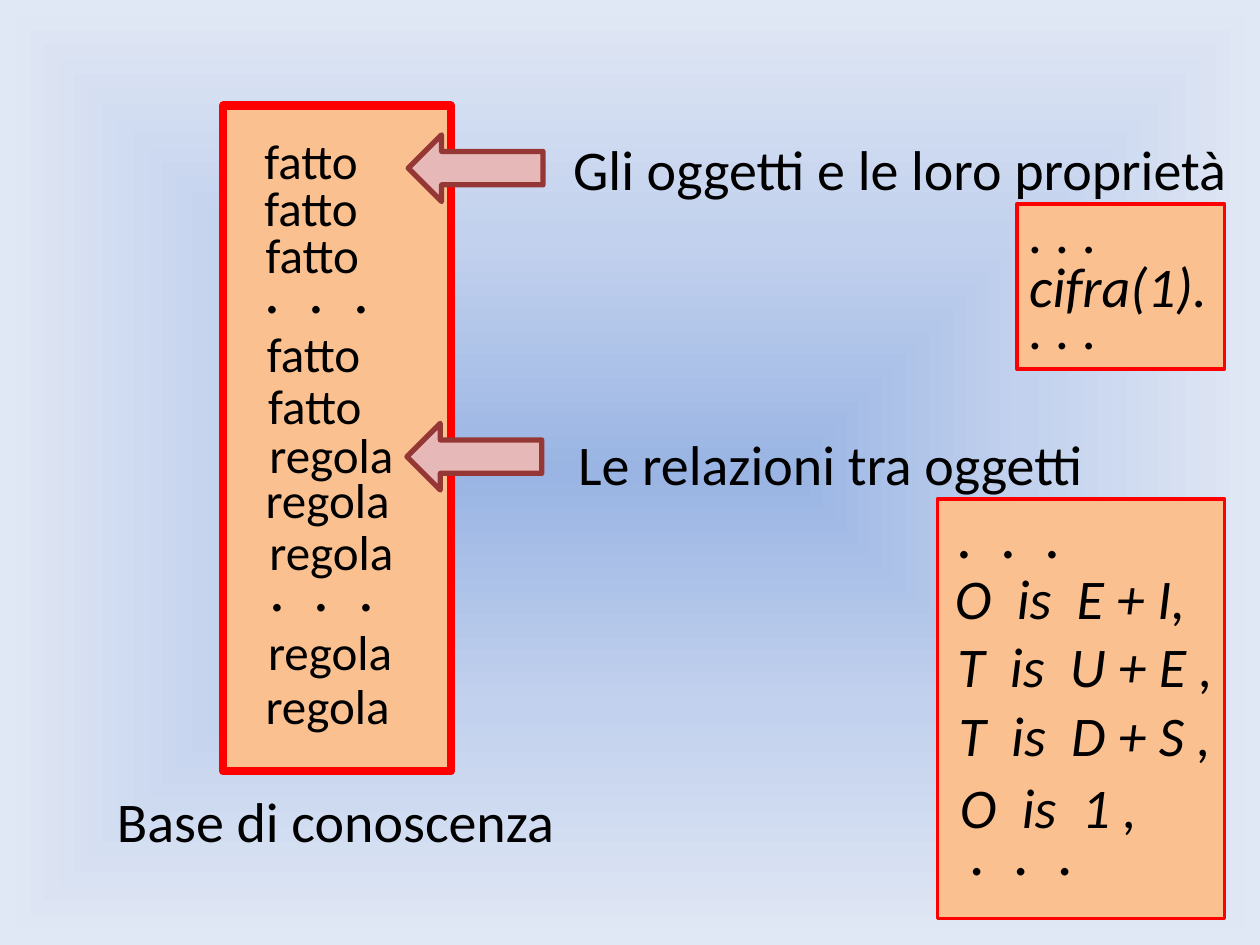
from pptx import Presentation
from pptx.dml.color import RGBColor
from pptx.enum import shapes, text
from pptx.oxml import parse_xml
from pptx.oxml.ns import nsdecls, qn
from pptx.util import Inches, Pt

FONT = "Calibri"
BLACK, RED, ORANGE = "000000", "FF0000", "FAC090"
PINK, MAROON = "E6B9B8", "953735"
DOTS = ".  .  ."


def color(hex_code):
    return RGBColor.from_string(hex_code)


def set_background(slide, stops):
    """Gradient spreading from the centre of the slide."""
    slide.background.fill.gradient()
    gradient = slide.element.find(".//" + qn("a:gradFill"))
    stop_xml = "".join(
        f'<a:gs pos="{percent * 1000}"><a:srgbClr val="{hex_code}"/></a:gs>'
        for percent, hex_code in stops)
    centred = parse_xml(
        f'<a:gradFill {nsdecls("a")} rotWithShape="1"><a:gsLst>{stop_xml}</a:gsLst>'
        '<a:path path="shape"><a:fillToRect l="50000" t="50000" r="50000" b="50000"/>'
        '</a:path></a:gradFill>')
    gradient.getparent().replace(gradient, centred)


def add_block(slide, preset, box, fill, line, width):
    block = slide.shapes.add_shape(preset, *map(Inches, box))
    block.shadow.inherit = False
    block.fill.solid()
    block.fill.fore_color.rgb = color(fill)
    block.line.color.rgb = color(line)
    block.line.width = Pt(width)
    return block


def add_run(paragraph, words, size, italic=False):
    run = paragraph.add_run()
    run.text = words
    run.font.name = FONT
    run.font.size = Pt(size)
    run.font.italic = italic
    run.font.color.rgb = color(BLACK)


def add_label(slide, words, left, top, width, size, italic=False):
    height = {28: 0.57, 32: 0.64, 36: 0.71}[size]
    label = slide.shapes.add_textbox(*map(Inches, (left, top, width, height)))
    frame = label.text_frame
    frame.word_wrap = True
    frame.auto_size = text.MSO_AUTO_SIZE.SHAPE_TO_FIT_TEXT
    add_run(frame.paragraphs[0], words, size, italic)


def add_fact_example(slide):
    example = add_block(slide, shapes.MSO_SHAPE.RECTANGLE,
                        (8.07, 1.62, 1.65, 1.31), ORANGE, RED, 2)
    frame = example.text_frame
    frame.word_wrap = True
    frame.vertical_anchor = text.MSO_ANCHOR.TOP
    frame.auto_size = text.MSO_AUTO_SIZE.SHAPE_TO_FIT_TEXT
    lines = [(". . .", 31), ("cifra(1).", 31), (". . .", 24)]
    for index, (words, spacing) in enumerate(lines):
        paragraph = frame.add_paragraph() if index else frame.paragraphs[0]
        paragraph.alignment = text.PP_ALIGN.LEFT
        paragraph.line_spacing = Pt(spacing)
        add_run(paragraph, words, 32, italic=True)


def main():
    prs = Presentation()
    prs.slide_width, prs.slide_height = Inches(10), Inches(7.5)
    slide = prs.slides.add_slide(prs.slide_layouts[6])
    set_background(slide, [(0, "9AB5E4"), (50, "C2D1ED"), (100, "E1E8F5")])

    # Panels for the rule example and the knowledge base
    rectangle = shapes.MSO_SHAPE.RECTANGLE
    add_block(slide, rectangle, (7.44, 3.96, 2.28, 3.33), ORANGE, RED, 2)
    add_block(slide, rectangle, (1.77, 0.84, 1.81, 5.28), ORANGE, RED, 5)

    # Facts and rules in the knowledge base
    facts = [(2, 0.99), (2, 1.36), (2.01, 1.73), (2.02, 2.52), (2.03, 2.93)]
    rules = [(2.04, 3.32), (2.01, 3.68), (2.04, 4.09), (2.03, 4.88), (2.01, 5.31)]
    for words, places, width in (("fatto", facts, 1.18), ("regola", rules, 1.34)):
        for left, top in places:
            add_label(slide, words, left, top, width, 28)
    for left, top in ((2, 1.94), (2.04, 4.3)):
        add_label(slide, DOTS, left, top, 1.18, 36)
    add_label(slide, "Base di conoscenza", 0.83, 6.19, 3.7, 32)

    # Arrows and their explanations
    for left, top in ((3.24, 1.07), (3.23, 3.36)):
        add_block(slide, shapes.MSO_SHAPE.LEFT_ARROW,
                  (left, top, 1.07, 0.53), PINK, MAROON, 3)
    add_label(slide, "Gli oggetti e le loro proprietà", 4.45, 1.02, 5.51, 32)
    add_label(slide, "Le relazioni tra oggetti", 4.49, 3.36, 5.51, 32)

    # Examples of a fact and of a rule
    add_fact_example(slide)
    equations = [
        ("O  is  E + I,", 7.48, 4.42, 2.18),
        ("T  is  U + E ,", 7.5, 4.96, 2.43),
        ("T  is  D + S ,", 7.51, 5.51, 2.29),
        ("O  is  1 ,", 7.52, 6.08, 2.25),
    ]
    for words, left, top, width in equations:
        add_label(slide, words, left, top, width, 32, italic=True)
    add_label(slide, DOTS, 7.49, 3.88, 1.18, 36)
    add_label(slide, DOTS, 7.6, 6.4, 1.18, 36, italic=True)

    prs.save("out.pptx")


if __name__ == "__main__":
    main()
